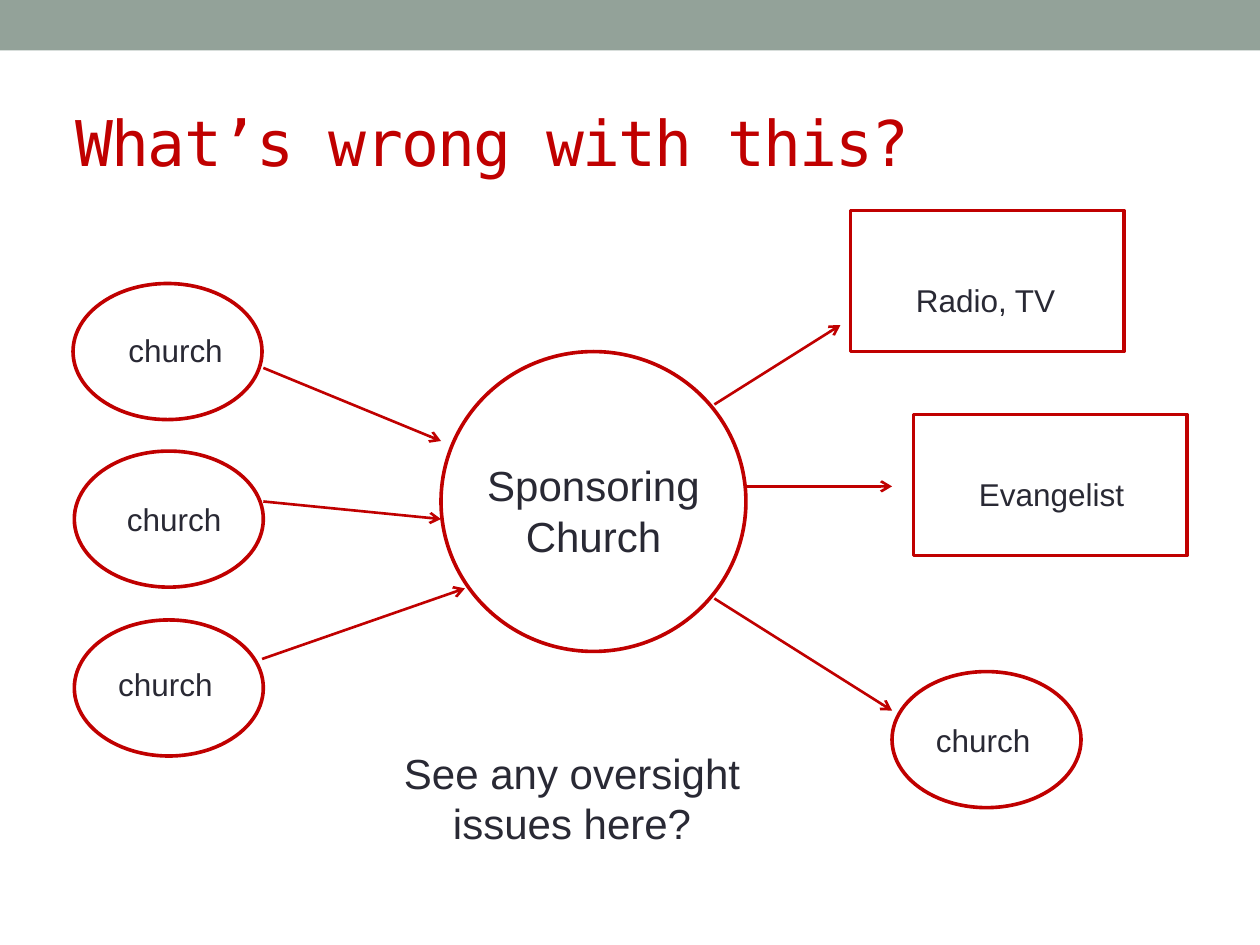
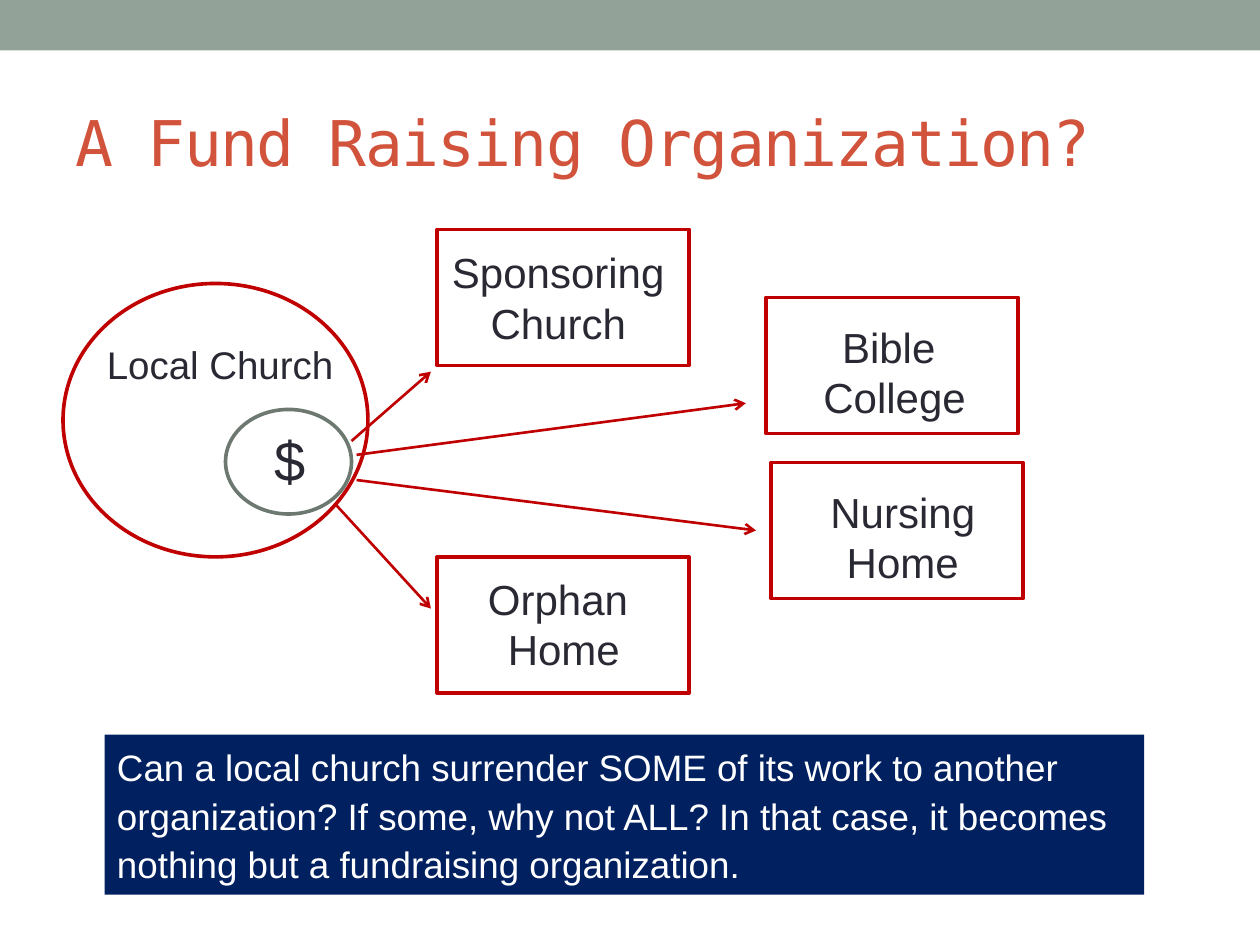
"""Build two slides on how churches pass work to other bodies."""
from lxml import etree
from pptx import Presentation
from pptx.dml.color import RGBColor
from pptx.enum.shapes import MSO_CONNECTOR, MSO_SHAPE
from pptx.enum.text import MSO_ANCHOR, MSO_AUTO_SIZE, PP_ALIGN
from pptx.oxml.ns import qn
from pptx.util import Inches, Pt

OVAL, RECT = MSO_SHAPE.OVAL, MSO_SHAPE.RECTANGLE
STRAIGHT = MSO_CONNECTOR.STRAIGHT
LEFT, CENTER = PP_ALIGN.LEFT, PP_ALIGN.CENTER
MIDDLE, TOP = MSO_ANCHOR.MIDDLE, MSO_ANCHOR.TOP
FIXED = MSO_AUTO_SIZE.NONE

RED, CORAL, SAGE, GRAY = "C00000", "D2533C", "93A299", "6D7871"
INK, NAVY, WHITE = "292934", "002060", "FFFFFF"
BODY, MONO = "Arial", "DejaVu Sans Mono"
SMALL = (1.5, 1.08)
LARGE = 2.42
MEDIA = (2.17, 1.12)
CARD = (2, 1.08)


def color(code):
    """Turn a hex string into a colour."""
    return RGBColor.from_string(code)


def style(para, size, hue, font=BODY, align=LEFT):
    """Format one paragraph and its runs."""
    para.alignment = align
    for run in para.runs:
        run.font.size = Pt(size)
        run.font.name = font
        run.font.color.rgb = color(hue)


def add_form(slide, kind, x, y, w, h, fill=WHITE, line=RED):
    """Draw a filled preset shape, outlined if a line colour is given."""
    form = slide.shapes.add_shape(kind, Inches(x), Inches(y), Inches(w), Inches(h))
    form.shadow.inherit = False
    form.fill.solid()
    form.fill.fore_color.rgb = color(fill)
    if line:
        form.line.color.rgb = color(line)
        form.line.width = Pt(2.08)
    else:
        form.line.fill.background()
    return form


def add_arrow(slide, x1, y1, x2, y2):
    """Draw a red arrow from the first point to the second."""
    arrow = slide.shapes.add_connector(
        STRAIGHT, Inches(x1), Inches(y1), Inches(x2), Inches(y2))
    arrow.line.color.rgb = color(RED)
    arrow.line.width = Pt(1.5)
    etree.SubElement(arrow.line._get_or_add_ln(), qn("a:tailEnd"), type="arrow")
    etree.SubElement(arrow.element.spPr, qn("a:effectLst"))


def add_label(slide, text, x, y, w, h, size=18, align=LEFT):
    """Place a wrapped text label."""
    frame = slide.shapes.add_textbox(
        Inches(x), Inches(y), Inches(w), Inches(h)).text_frame
    frame.word_wrap = True
    para = frame.paragraphs[0]
    para.text = text
    style(para, size, INK, align=align)


def add_note(slide, text, x, y, w, h):
    """Place a navy panel with white text."""
    frame = add_form(slide, RECT, x, y, w, h, NAVY, None).text_frame
    frame.word_wrap = True
    frame.vertical_anchor = TOP
    para = frame.paragraphs[0]
    para.text = text
    para.line_spacing = 1.1
    style(para, 21, WHITE)


def add_slide(deck, text, hue):
    """Add a slide with a styled title."""
    slide = deck.slides.add_slide(deck.slide_layouts[5])
    title = slide.shapes.title
    title.left, title.top = Inches(0.5), Inches(0.58)
    title.width, title.height = Inches(9), Inches(1.08)
    frame = title.text_frame
    frame.text = text
    frame.auto_size = FIXED
    frame.vertical_anchor = MIDDLE
    para = frame.paragraphs[0]
    style(para, 36, hue, MONO)
    for run in para.runs:
        run.font._element.set("spc", "-100")
    return slide


def share_band(slide):
    """Move a top band into the layout so that all slides show it."""
    band = add_form(slide, RECT, 0, 0, 10, 0.4, SAGE, None)
    slide.slide_layout.shapes.element.insert(2, band.element)


def draw_sponsor(deck):
    """Show churches that fund a sponsoring church."""
    slide = add_slide(deck, "What’s wrong with this?", RED)
    share_band(slide)
    for x, y in ((0.58, 2.25), (0.59, 3.58), (0.59, 4.92), (7.08, 5.33)):
        add_form(slide, OVAL, x, y, *SMALL)
    add_form(slide, OVAL, 3.5, 2.79, LARGE, 2.38)
    for x, y in ((6.75, 1.67), (7.25, 3.29)):
        add_form(slide, RECT, x, y, *MEDIA)
    for ends in ((2.09, 2.92, 3.5, 3.5), (2.09, 3.98, 3.5, 4.12),
                 (2.08, 5.23, 3.69, 4.67), (5.67, 3.21, 6.67, 2.58),
                 (5.92, 3.86, 7.08, 3.86), (5.67, 4.75, 7.08, 5.64)):
        add_arrow(slide, *ends)
    for x, y in ((0.92, 2.58), (0.91, 3.92), (0.84, 5.23), (7.33, 5.67)):
        add_label(slide, "church", x, y, 1, 0.4)
    add_label(slide, "Radio, TV", 7.17, 2.18, 1.38, 0.4)
    add_label(slide, "Evangelist", 7.67, 3.72, 1.42, 0.4)
    add_label(slide, "Sponsoring\nChurch", 3.75, 3.6, 1.92, 0.91, 24, CENTER)
    add_label(slide, "See any oversight issues here?",
              3.08, 5.88, 2.92, 0.91, 24, CENTER)


def draw_fund(deck):
    """Show a local church that funds four bodies."""
    slide = add_slide(deck, "A Fund Raising Organization?", CORAL)
    add_form(slide, OVAL, 0.5, 2.25, LARGE, 2.17)
    for x, y in ((3.47, 1.82), (6.12, 3.67), (6.08, 2.36), (3.47, 4.42)):
        add_form(slide, RECT, x, y, *CARD)
    for ends in ((2.79, 3.5, 3.42, 2.95), (2.83, 3.61, 5.92, 3.2),
                 (2.83, 3.81, 6, 4.21), (2.67, 4.01, 3.42, 4.83)):
        add_arrow(slide, *ends)
    for text, x, y, w in (("Sponsoring Church", 3.47, 1.91, 1.92),
                          ("Bible \nCollege", 6.12, 2.5, 1.96),
                          ("Nursing Home", 6.33, 3.81, 1.67),
                          ("Orphan \nHome", 3.56, 4.5, 1.83)):
        add_label(slide, text, x, y, w, 0.91, 24, CENTER)
    add_label(slide, "Local Church", 0.75, 2.66, 2.08, 0.47, 22)
    add_form(slide, OVAL, 1.79, 3.25, 1, 0.83, line=GRAY)
    add_label(slide, "$", 2.08, 3.33, 0.96, 0.64, 32)
    add_note(slide, "Can a local church surrender SOME of its work to another "
             "organization? If some, why not ALL? In that case, it becomes "
             "nothing but a fundraising organization.", 0.83, 5.83, 8.25, 1.27)


def main():
    """Build and save the deck."""
    deck = Presentation()
    deck.slide_width, deck.slide_height = Inches(10), Inches(7.5)
    draw_sponsor(deck)
    draw_fund(deck)
    deck.save("out.pptx")


if __name__ == "__main__":
    main()
